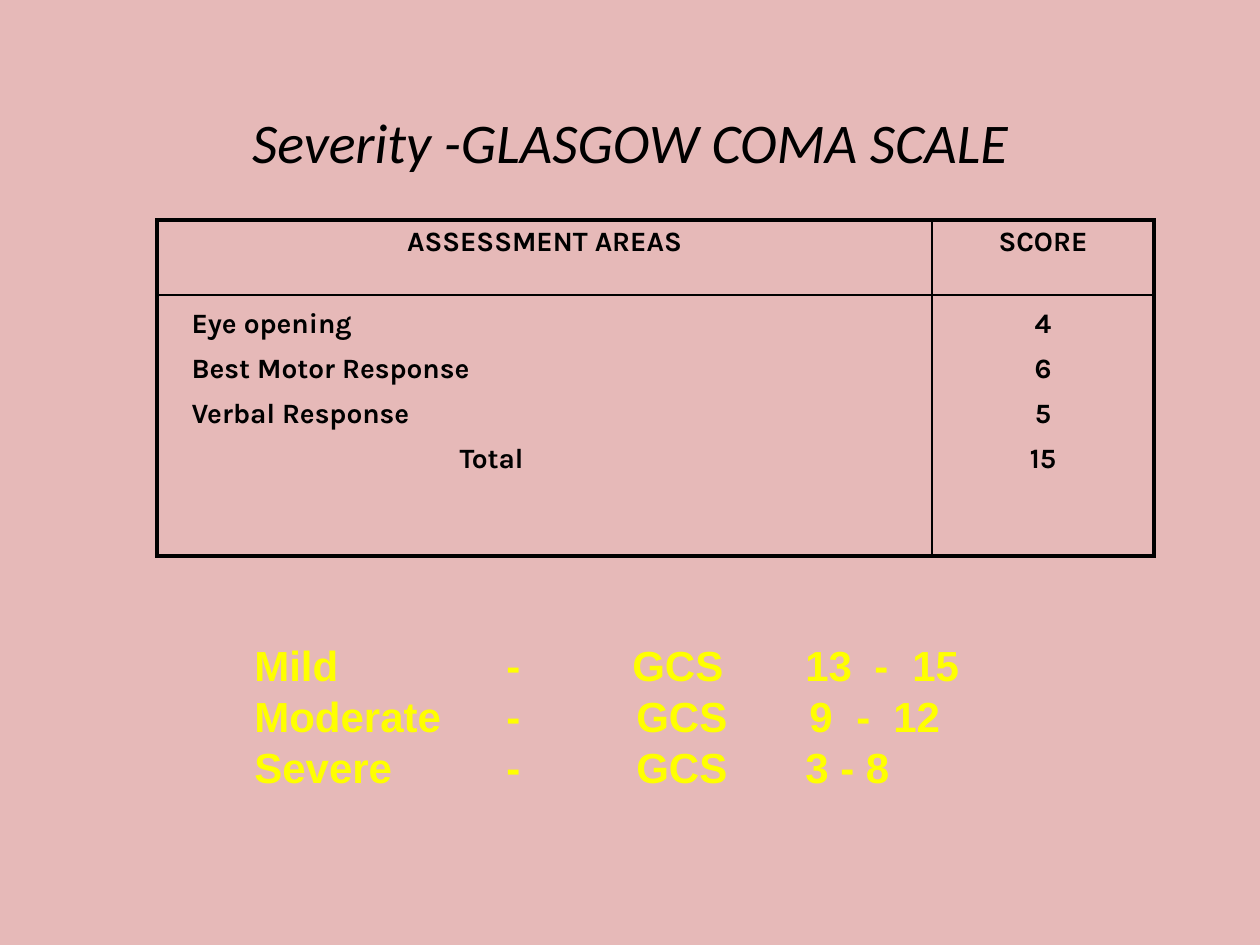
"""Build a slide on coma scale scores and severity."""
from dataclasses import dataclass

from lxml import etree
from pptx import Presentation
from pptx.dml.color import RGBColor
from pptx.enum.text import MSO_ANCHOR, PP_ALIGN
from pptx.oxml.ns import qn
from pptx.slide import Slide
from pptx.table import _Cell
from pptx.text.text import _Paragraph
from pptx.util import Emu, Pt

LEFT, CENTER = PP_ALIGN.LEFT, PP_ALIGN.CENTER
MIDDLE = MSO_ANCHOR.MIDDLE


@dataclass(frozen=True)
class Font:
    """Face, size and colour of one kind of text."""
    face: str
    size: int
    color: str
    bold: bool = False
    italic: bool = False


@dataclass(frozen=True)
class Theme:
    """Colours, fonts and line widths of the slide."""
    back: str = "E6B9B8"
    line: str = "000000"
    outer: float = 2.25
    inner: float = 1
    title: Font = Font("Calibri", 32, "000000", italic=True)
    cell: Font = Font("Karla", 16, "000000", bold=True)
    grade: Font = Font("Arial", 24, "FFFF00", bold=True)


@dataclass(frozen=True)
class Area:
    """One assessed area with its score and indent."""
    name: str
    score: str
    indent: int = 22


@dataclass(frozen=True)
class Grade:
    """One severity grade with its tab stops."""
    words: tuple[str, ...]
    stops: tuple[int, ...]


THEME = Theme()
AREAS = (
    Area("Eye opening", "4"),
    Area("Best Motor Response", "6"),
    Area("Verbal Response", "5"),
    Area("Total", "15", 290),
)
GRADES = (
    Grade(("Mild", "-", "GCS", "13", "-", "15"), (252, 378, 551, 620, 658)),
    Grade(("Moderate", "-", "GCS", "9", "-", "12"), (252, 382, 555, 602, 639)),
    Grade(("Severe", "-", "GCS", "3 - 8"), (252, 382, 551)),
)


def px(count: int) -> Emu:
    """Turn pixels into EMU."""
    return Emu(round(count * 914400 / 126))


def style(para: _Paragraph, font: Font, align: PP_ALIGN) -> None:
    """Format every run of a paragraph."""
    para.alignment = align
    for run in para.runs:
        run.font.name = font.face
        run.font.size = Pt(font.size)
        run.font.bold = font.bold
        run.font.italic = font.italic
        run.font.color.rgb = RGBColor.from_string(font.color)


def space(paras: tuple[_Paragraph, ...], line: float, gap: float) -> None:
    """Set line spacing, and a gap before all but the first paragraph."""
    for spot, para in enumerate(paras):
        para.line_spacing = line
        if spot:
            para.space_before = Pt(gap)


def frame(cell: _Cell, row: int, col: int) -> None:
    """Clear a cell's fill and draw its four borders."""
    cell.fill.background()
    props = cell._tc.get_or_add_tcPr()
    sides = (("L", col == 0), ("R", col == 1), ("T", row == 0), ("B", row == 1))
    for spot, (side, edge) in enumerate(sides):
        width = THEME.outer if edge else THEME.inner
        line = etree.Element(qn(f"a:ln{side}"), w=str(Pt(width)))
        fill = etree.SubElement(line, qn("a:solidFill"))
        etree.SubElement(fill, qn("a:srgbClr"), val=THEME.line)
        props.insert(spot, line)


def add_title(slide: Slide, text: str) -> None:
    """Place and fill the title."""
    title = slide.shapes.title
    title.left, title.top = px(95), px(42)
    title.width, title.height = px(1071), px(199)
    body = title.text_frame
    body.vertical_anchor = MIDDLE
    body.text = text
    style(body.paragraphs[0], THEME.title, CENTER)


def add_scores(slide: Slide) -> None:
    """Draw the table of areas and scores."""
    cols, rows = (775, 222), (75, 261)
    table = slide.shapes.add_table(
        2, 2, px(157), px(220), px(sum(cols)), px(sum(rows))).table
    table.first_row = table.horz_banding = False
    for col, width in enumerate(cols):
        table.columns[col].width = px(width)
    for row, height in enumerate(rows):
        table.rows[row].height = px(height)
    texts = (
        ("ASSESSMENT AREAS", "SCORE"),
        ("\n".join(a.name for a in AREAS), "\n".join(a.score for a in AREAS)),
    )
    for row, line in enumerate(texts):
        for col, text in enumerate(line):
            cell = table.cell(row, col)
            frame(cell, row, col)
            cell.text_frame.text = text
            paras = cell.text_frame.paragraphs
            for para in paras:
                style(para, THEME.cell, LEFT if (row, col) == (1, 0) else CENTER)
            if row:
                space(paras, 1.2, 3.2)
    for para, area in zip(table.cell(1, 0).text_frame.paragraphs, AREAS):
        para._p.get_or_add_pPr().set("marL", str(px(area.indent)))


def add_grades(slide: Slide) -> None:
    """Write the severity grades in tabbed columns."""
    box = slide.shapes.add_textbox(px(242), px(651), px(756), px(158))
    body = box.text_frame
    body.word_wrap = True
    body.text = "\n".join("\t".join(g.words) for g in GRADES)
    for para, grade in zip(body.paragraphs, GRADES):
        tabs = etree.SubElement(para._p.get_or_add_pPr(), qn("a:tabLst"))
        for stop in grade.stops:
            etree.SubElement(tabs, qn("a:tab"), pos=str(px(stop)), algn="l")
        style(para, THEME.grade, LEFT)
    space(body.paragraphs, 0.6, 12)


def main() -> None:
    """Build and save the slide."""
    deck = Presentation()
    deck.slide_width, deck.slide_height = px(1260), px(945)
    slide = deck.slides.add_slide(deck.slide_layouts[5])
    slide.background.fill.solid()
    slide.background.fill.fore_color.rgb = RGBColor.from_string(THEME.back)
    add_title(slide, "Severity -GLASGOW COMA SCALE")
    add_scores(slide)
    add_grades(slide)
    deck.save("out.pptx")


if __name__ == "__main__":
    main()
